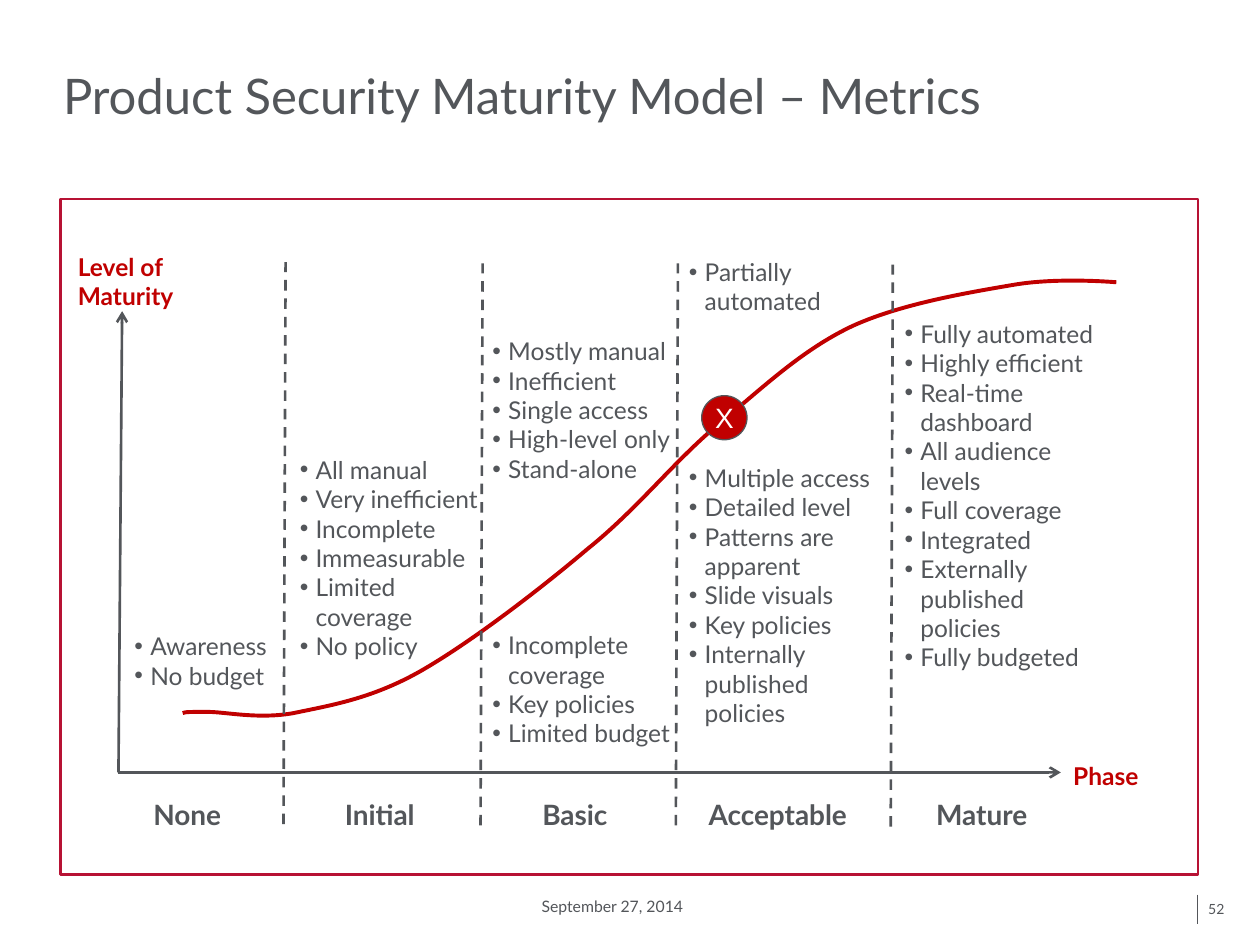
import pptx
import pptx.util
import pptx.dml.color
import pptx.enum.dml
import pptx.enum.shapes
import pptx.enum.text
import pptx.oxml.ns
import lxml.etree
from dataclasses import dataclass

Pt = pptx.util.Pt
qn = pptx.oxml.ns.qn
Align = pptx.enum.text.PP_ALIGN
Anchor = pptx.enum.text.MSO_ANCHOR
Shape = pptx.enum.shapes.MSO_SHAPE


@dataclass(frozen=True)
class Theme:
    font: str = "Lato"
    mark: str = "Arial"
    gray: str = "53565A"
    red: str = "C00000"
    frame: str = "B71234"
    white: str = "FFFFFF"
    title: float = 28
    phase: float = 16
    body: float = 14
    date: float = 9
    page: float = 8


theme = Theme()


def color(code):
    return pptx.dml.color.RGBColor.from_string(code)


def write(frame, text, size=theme.body, ink=theme.gray, font=theme.font, bold=False,
          align=Align.LEFT, anchor=Anchor.TOP, inset=None, bullet=False, pitch=None):
    frame.word_wrap = True
    frame.vertical_anchor = anchor
    if inset is not None:
        frame.margin_left = frame.margin_right = Pt(inset)
        frame.margin_top = frame.margin_bottom = Pt(inset)
    for index, line in enumerate(text.split("\n")):
        para = frame.add_paragraph() if index else frame.paragraphs[0]
        para.text = line
        para.alignment = align
        if pitch:
            para.line_spacing = pitch
        if bullet:
            props = para._p.get_or_add_pPr()
            props.set("marL", str(Pt(9)))
            props.set("indent", str(-Pt(9)))
            face = lxml.etree.SubElement(props, qn("a:buFont"))
            face.set("typeface", theme.mark)
            lxml.etree.SubElement(props, qn("a:buChar")).set("char", "•")
        para.font.name = font
        para.font.size = Pt(size)
        para.font.bold = bold
        para.font.color.rgb = color(ink)


class Deck:
    def __init__(self, theme):
        self.theme = theme
        self.show = pptx.Presentation()
        self.show.slide_width, self.show.slide_height = Pt(720), Pt(540)
        self.slide = self.show.slides.add_slide(self.show.slide_layouts[5])
        self.shapes = self.slide.shapes

    def title(self, text, *box):
        head = self.shapes.title
        head.left, head.top, head.width, head.height = map(Pt, box)
        write(head.text_frame, text, size=self.theme.title, anchor=Anchor.BOTTOM,
              inset=0, pitch=0.9)

    def text(self, text, *box, **style):
        item = self.shapes.add_textbox(*map(Pt, box))
        write(item.text_frame, text, **style)

    def shape(self, kind, fill, ink, width, *box):
        item = self.shapes.add_shape(kind, *map(Pt, box))
        item.shadow.inherit = False
        item.fill.solid()
        item.fill.fore_color.rgb = color(fill)
        item.line.color.rgb = color(ink)
        item.line.width = Pt(width)
        return item

    def line(self, *ends, width=1.5, dash=False, arrow=False):
        kind = pptx.enum.shapes.MSO_CONNECTOR.STRAIGHT
        item = self.shapes.add_connector(kind, *map(Pt, ends))
        item.line.color.rgb = color(self.theme.gray)
        item.line.width = Pt(width)
        if dash:
            item.line.dash_style = pptx.enum.dml.MSO_LINE.DASH
        if arrow:
            stroke = item.line._get_or_add_ln()
            lxml.etree.SubElement(stroke, qn("a:tailEnd")).set("type", "arrow")
        lxml.etree.SubElement(item._element.spPr, qn("a:effectLst"))

    def curve(self, start, points, ink, width):
        pen = self.shapes.build_freeform(*map(Pt, start))
        pen.add_line_segments([(Pt(x), Pt(y)) for x, y in points], close=False)
        item = pen.convert_to_shape()
        item.shadow.inherit = False
        item.fill.background()
        item.line.color.rgb = color(ink)
        item.line.width = Pt(width)
        route = item._element.find(".//" + qn("a:path"))
        legs = route.findall(qn("a:lnTo"))
        for index in range(0, len(legs), 3):
            bend = lxml.etree.SubElement(route, qn("a:cubicBezTo"))
            for leg in legs[index:index + 3]:
                bend.append(leg[0])
                route.remove(leg)

    def save(self):
        self.show.save("out.pptx")


def main():
    deck = Deck(theme)
    deck.line(684, 511.2, 684, 527.8, width=0.5)
    deck.title("Product Security Maturity Model – Metrics", 36, 14.4, 648, 56.9)
    deck.shape(Shape.RECTANGLE, theme.white, theme.frame, 1.5, 34.6, 113.8, 650, 386)
    deck.line(67.7, 441.4, 69.8, 177.8, arrow=True)
    deck.line(67.7, 441.4, 606.2, 441.4, arrow=True)

    phases = {"None": 107, "Initial": 217, "Basic": 328.5, "Acceptable": 444.5, "Mature": 561}
    for name, mid in phases.items():
        deck.text(name, mid - 60, 452.2, 120, 26.6, size=theme.phase, bold=True,
                  align=Align.CENTER)

    deck.curve((104.4, 407.5), [
        (105.8, 406.8), (108, 406.8), (118.8, 406.8),
        (128.9, 406.8), (147.6, 411.1), (167.8, 407.5),
        (187.9, 403.2), (211.7, 399.6), (239.8, 383.8),
        (267.8, 367.9), (307.4, 337.7), (335.5, 313.9),
        (364.3, 290.9), (385.2, 263.5), (410.4, 242.6),
        (435.6, 221.8), (457.9, 200.2), (486.7, 186.5),
        (514.8, 173.5), (554.4, 167), (579.6, 162.7),
        (604.8, 158.4), (637.9, 161.3), (637.9, 161.3),
    ], theme.red, 2.25)

    for foot, top in ((162, 149.8), (274.6, 150.5), (386.2, 150.5), (509, 151.2)):
        deck.line(foot, top + 321.2, foot + 1.2, top, dash=True)

    lists = (
        (69.8, 357.1, 100, "Awareness\nNo budget"),
        (164.2, 256.3, 123.8, "All manual\nVery inefficient\nIncomplete\nImmeasurable\n"
         "Limited coverage\nNo policy"),
        (274.3, 188.6, 123.8, "Mostly manual\nInefficient\nSingle access\n"
         "High-level only\nStand-alone"),
        (274.3, 356.6, 123.8, "Incomplete coverage\nKey policies\nLimited budget"),
        (386.6, 143.3, 123.8, "Partially automated"),
        (386.6, 260.9, 123.8, "Multiple access\nDetailed level\nPatterns are apparent\n"
         "Slide visuals\nKey policies\nInternally published policies"),
        (509.8, 178.6, 123.8, "Fully automated\nHighly efficient\nReal-time dashboard\n"
         "All audience levels\nFull coverage\nIntegrated\n"
         "Externally published policies\nFully budgeted"),
    )
    for left, top, width, text in lists:
        rows = text.count("\n") + 1
        deck.text(text, left, top, width, rows * 16.8 + 7.2, bullet=True)

    deck.text("Level of Maturity", 37.4, 140.4, 78.5, 41, ink=theme.red, bold=True)
    deck.text("Phase", 606.2, 431.3, 62.6, 24.5, ink=theme.red, bold=True)
    badge = deck.shape(Shape.OVAL, theme.red, theme.gray, 0.75, 401, 226.1, 25.9, 25.2)
    write(badge.text_frame, "X", size=theme.phase, ink=theme.white, font=theme.mark,
          align=Align.CENTER, anchor=Anchor.MIDDLE, inset=0)
    deck.text("52", 683.3, 511.2, 30.2, 16.6, size=theme.page, anchor=Anchor.MIDDLE)
    deck.text("September 27, 2014", 302.4, 509, 127.4, 17.3, size=theme.date,
              anchor=Anchor.MIDDLE)
    deck.save()


if __name__ == "__main__":
    main()
